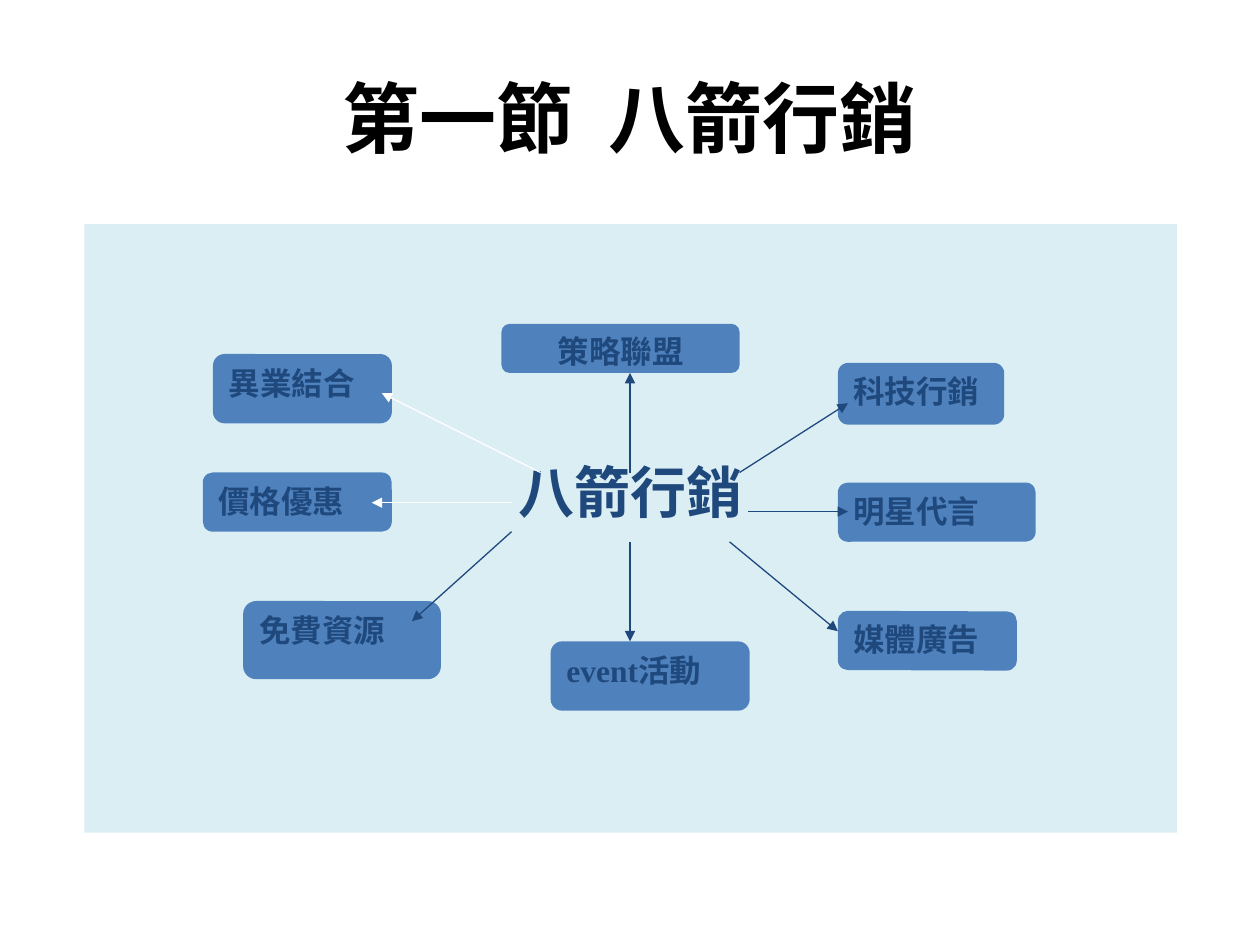
from lxml import etree
from pptx import Presentation
from pptx.dml.color import RGBColor
from pptx.enum import shapes, text
from pptx.oxml import ns
from pptx.util import Inches, Pt

NAVY, BLUE, PALE, WHITE, BLACK = "1F497D", "4F81BD", "DBEEF4", "FFFFFF", "000000"
HEADING_FONT, CJK_FONT, LATIN_FONT = "Calibri", "Noto Sans CJK SC", "Times New Roman"
ROUND = shapes.MSO_SHAPE.ROUNDED_RECTANGLE
PROCESS = shapes.MSO_SHAPE.FLOWCHART_ALTERNATE_PROCESS
LEFT, CENTER, JUSTIFY = text.PP_ALIGN.LEFT, text.PP_ALIGN.CENTER, text.PP_ALIGN.JUSTIFY

# spans, (left, top, width, height), preset, alignment, rotation
TACTICS = [
    (["策略聯盟"], (3.98, 2.57, 1.89, 0.39), PROCESS, CENTER, 0),
    (["科技行銷"], (6.65, 2.88, 1.32, 0.49), PROCESS, LEFT, 0),
    (["明星代言"], (6.65, 3.83, 1.57, 0.47), ROUND, LEFT, 0),
    (["媒體廣告"], (6.65, 4.85, 1.42, 0.47), ROUND, LEFT, 0.2),
    (["event", "活動"], (4.37, 5.09, 1.58, 0.55), ROUND, JUSTIFY, 0),
    (["免費資源"], (1.93, 4.77, 1.57, 0.62), ROUND, LEFT, 0),
    (["價格優惠"], (1.61, 3.75, 1.5, 0.47), ROUND, LEFT, 0),
    (["異業結合"], (1.69, 2.81, 1.42, 0.55), ROUND, LEFT, 0),
]

# start, end, colour
ARROWS = [
    ((5, 3.75), (5, 2.96), NAVY),
    ((5.87, 3.75), (6.73, 3.2), NAVY),
    ((5.94, 4.06), (6.73, 4.06), NAVY),
    ((5.79, 4.3), (6.65, 5.01), NAVY),
    ((5, 4.3), (5, 5.09), NAVY),
    ((4.06, 4.22), (3.27, 4.93), NAVY),
    ((4.06, 3.99), (2.95, 3.99), WHITE),
    ((4.29, 3.75), (3.03, 3.12), WHITE),
]


def rgb(value):
    return RGBColor.from_string(value)


class SlideBuilder:
    def __init__(self, deck):
        self.slide = deck.slides.add_slide(deck.slide_layouts[5])

    def style(self, para, size, color, align, font=None):
        para.alignment = align
        para.font.size = Pt(size)
        para.font.bold = True
        para.font.color.rgb = rgb(color)
        if font:
            para.font.name = font

    def title(self, words, bounds):
        title = self.slide.shapes.title
        title.left, title.top, title.width, title.height = map(Inches, bounds)
        title.text_frame.vertical_anchor = text.MSO_ANCHOR.MIDDLE
        title.text_frame.text = words
        self.style(title.text_frame.paragraphs[0], 44, BLACK, CENTER, HEADING_FONT)

    def box(self, preset, bounds, fill):
        box = self.slide.shapes.add_shape(preset, *map(Inches, bounds))
        box.shadow.inherit = False
        box.fill.solid()
        box.fill.fore_color.rgb = rgb(fill)
        box.line.fill.background()
        box.text_frame.word_wrap = True
        box.text_frame.vertical_anchor = text.MSO_ANCHOR.TOP
        return box

    def panel(self, words, bounds, text_top):
        """Draw the background panel with its central theme."""
        panel = self.box(shapes.MSO_SHAPE.RECTANGLE, bounds, PALE)
        panel.text_frame.margin_top = Inches(text_top)
        panel.text_frame.text = words
        self.style(panel.text_frame.paragraphs[0], 32, NAVY, CENTER, HEADING_FONT)

    def tactic(self, spans, bounds, preset, align, rotation):
        box = self.box(preset, bounds, BLUE)
        box.rotation = rotation
        para = box.text_frame.paragraphs[0]
        self.style(para, 18, NAVY, align)
        for words in spans:
            span = para.add_run()
            span.text = words
            span.font.name = LATIN_FONT if words.isascii() else CJK_FONT

    def arrow(self, start, end, color):
        arrow = self.slide.shapes.add_connector(
            shapes.MSO_CONNECTOR.STRAIGHT, *map(Inches, start + end))
        arrow.line.color.rgb = rgb(color)
        arrow.line.width = Pt(0.75)
        tail = etree.SubElement(arrow.line._get_or_add_ln(), ns.qn("a:tailEnd"))
        tail.set("type", "triangle")
        etree.SubElement(arrow._element.spPr, ns.qn("a:effectLst"))


def main():
    deck = Presentation()
    deck.slide_width, deck.slide_height = Inches(10), Inches(7.5)
    builder = SlideBuilder(deck)
    builder.title("第一節  八箭行銷", (0.5, 0.3, 9, 1.25))
    builder.panel("八箭行銷", (0.67, 1.78, 8.67, 4.83), 1.85)
    for tactic in TACTICS:
        builder.tactic(*tactic)
    for arrow in ARROWS:
        builder.arrow(*arrow)
    deck.save("out.pptx")


if __name__ == "__main__":
    main()
